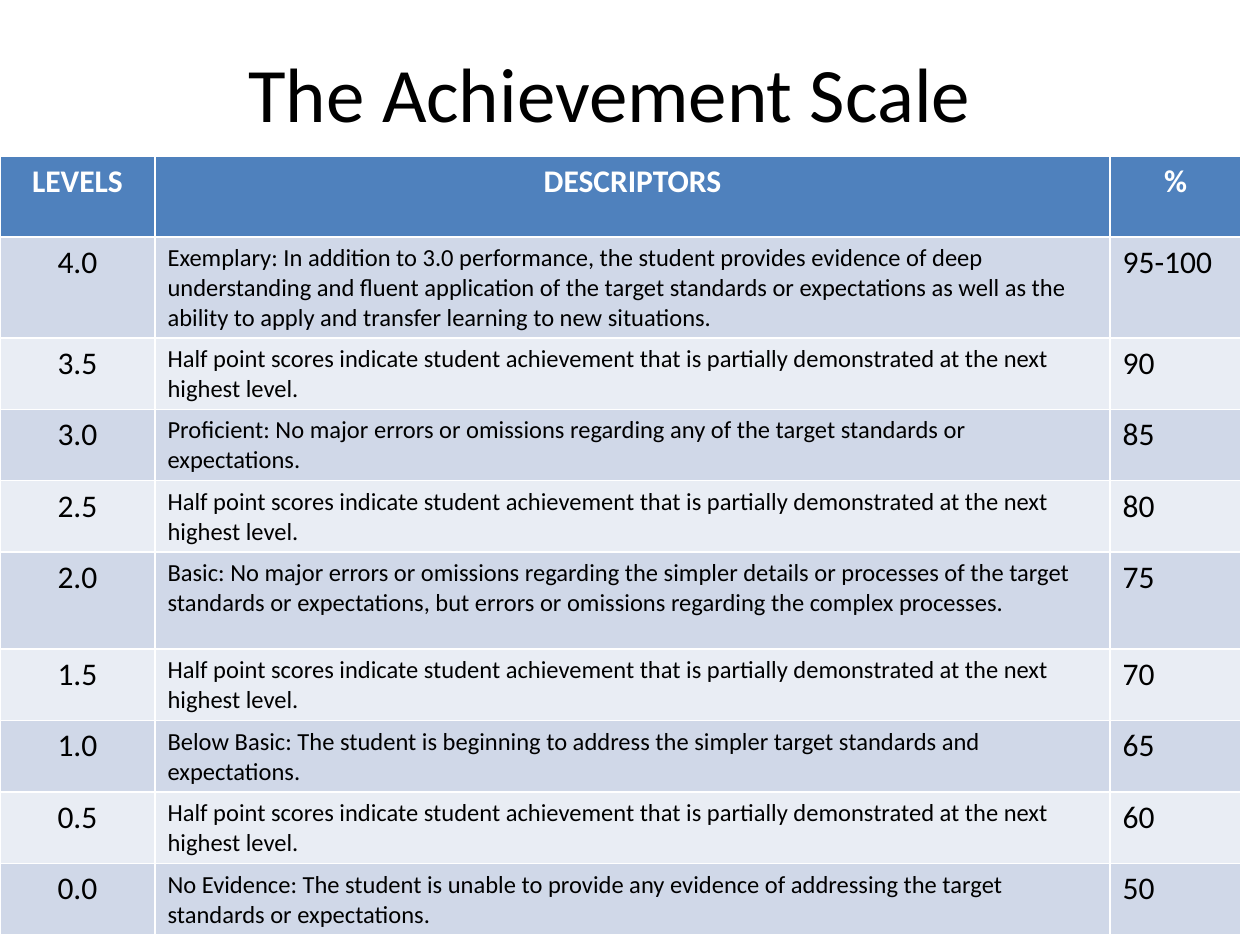
from pptx import Presentation
from pptx.dml.color import RGBColor
from pptx.enum.text import MSO_ANCHOR, PP_ALIGN
from pptx.util import Inches, Pt

HALF = ("Half point scores indicate student achievement that is partially "
        "demonstrated at the next highest level.")
HEAD = ("LEVELS", "DESCRIPTORS", "%")
ROWS = [
    ("4.0", "Exemplary: In addition to 3.0 performance, the student provides "
            "evidence of deep understanding and fluent application of the target "
            "standards or expectations as well as the ability to apply and "
            "transfer learning to new situations.", "95-100"),
    ("3.5", HALF, "90"),
    ("3.0", "Proficient: No major errors or omissions regarding any of the "
            "target standards or expectations.", "85"),
    ("2.5", HALF, "80"),
    ("2.0", "Basic: No major errors or omissions regarding the simpler details "
            "or processes of the target standards or expectations, but errors "
            "or omissions regarding the complex processes.", "75"),
    ("1.5", HALF, "70"),
    ("1.0", "Below Basic: The student is beginning to address the simpler "
            "target standards and expectations.", "65"),
    ("0.5", HALF, "60"),
    ("0.0", "No Evidence: The student is unable to provide any evidence of "
            "addressing the target standards or expectations.", "50"),
]
WIDTHS = (1.23, 7.58, 1.04)
HEIGHTS = [0.64, 0.8] + [0.55] * 3 + [0.77] + [0.55] * 4
BANDS = ("D0D8E8", "E9EDF4")


def color(code):
    return RGBColor.from_string(code)


class Deck:
    font = "Calibri"
    ink = "000000"
    paper = "FFFFFF"
    accent = "4F81BD"

    def __init__(self, width, height):
        self.show = Presentation()
        self.show.slide_width = Inches(width)
        self.show.slide_height = Inches(height)
        self.slide = self.show.slides.add_slide(self.show.slide_layouts[6])

    def label(self, frame, text, size, ink, align, bold=False):
        para = frame.paragraphs[0]
        para.text = text
        para.alignment = align
        font = para.font
        font.name, font.size, font.bold = self.font, Pt(size), bold
        font.color.rgb = color(ink)

    def title(self, text, *box):
        frame = self.slide.shapes.add_textbox(*map(Inches, box)).text_frame
        frame.word_wrap = True
        frame.vertical_anchor = MSO_ANCHOR.MIDDLE
        self.label(frame, text, 44, self.ink, PP_ALIGN.CENTER)

    def table(self, left, top, widths, heights, head, rows):
        box = map(Inches, (left, top, sum(widths), sum(heights)))
        grid = self.slide.shapes.add_table(len(heights), len(widths), *box).table
        for col, width in zip(grid.columns, widths):
            col.width = Inches(width)
        for row, height in zip(grid.rows, heights):
            row.height = Inches(height)
        for r, texts in enumerate([head] + rows):
            top_row = r == 0
            fill = self.accent if top_row else BANDS[(r - 1) % 2]
            ink = self.paper if top_row else self.ink
            for c, text in enumerate(texts):
                cell = grid.cell(r, c)
                cell.fill.solid()
                cell.fill.fore_color.rgb = color(fill)
                size = 14 if c == 1 and not top_row else 18
                align = PP_ALIGN.CENTER if top_row or c == 0 else PP_ALIGN.LEFT
                self.label(cell.text_frame, text, size, ink, align, top_row)


def main():
    deck = Deck(10, 7.5)
    deck.title("The Achievement Scale", 0.5, 0.3, 8.68, 0.86)
    deck.table(0, 1.24, WIDTHS, HEIGHTS, HEAD, ROWS)
    deck.show.save("out.pptx")


if __name__ == "__main__":
    main()
